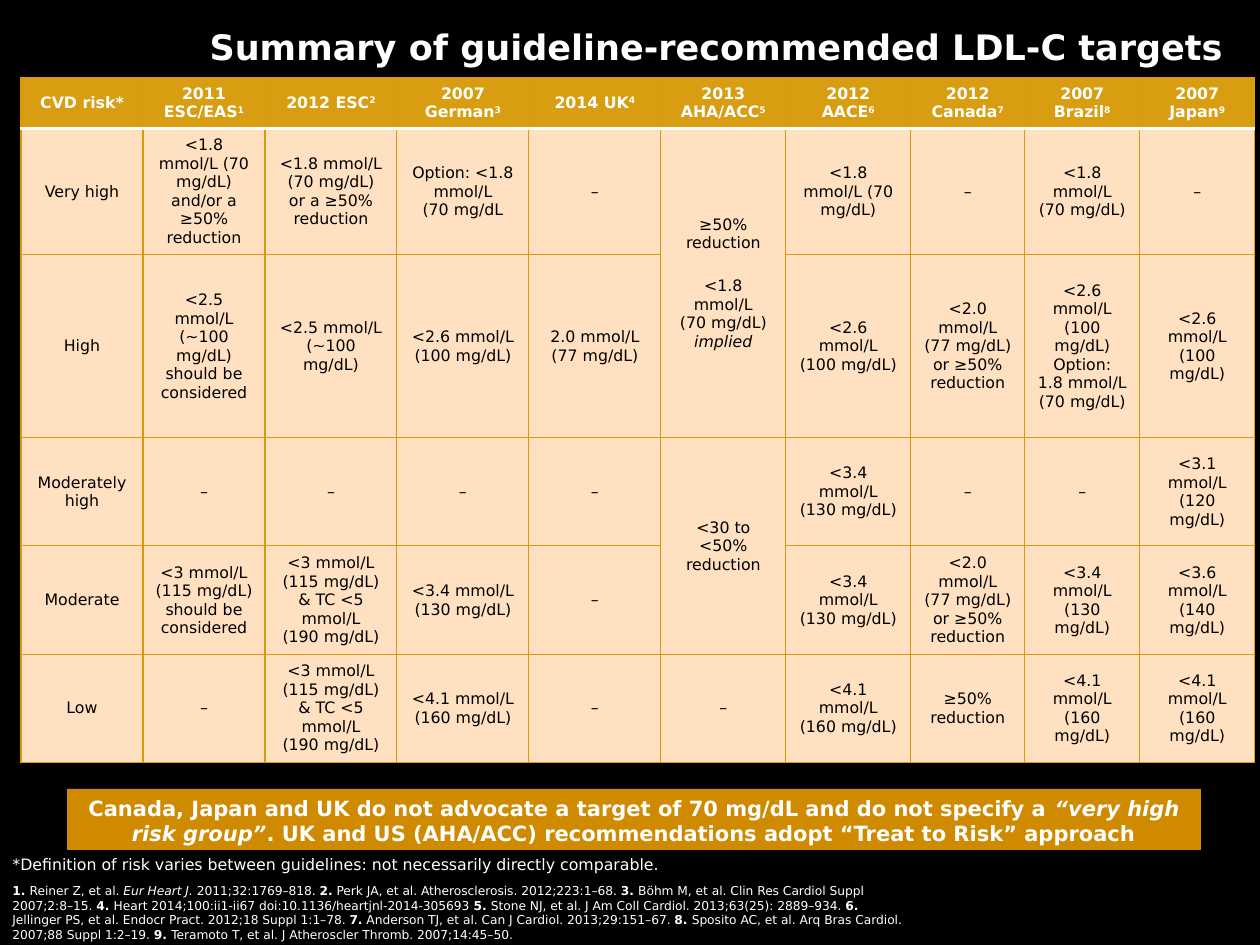
from dataclasses import dataclass
from lxml import etree
from pptx import Presentation
from pptx.dml.color import RGBColor as Color
from pptx.enum.text import MSO_ANCHOR as Anchor, MSO_AUTO_SIZE as AutoSize, PP_ALIGN as Align
from pptx.oxml.ns import qn
from pptx.util import Emu, Pt


@dataclass(frozen=True)
class Theme:
    font: str = "DejaVu Sans"
    background: str = "000000"
    light: str = "FFFFFF"
    dark: str = "000000"
    header: str = "D89D10"
    cell: str = "FFE0C1"
    border: str = "D89C0B"
    banner: str = "CF8A00"
    title_size: int = 20
    banner_size: int = 12
    table_size: int = 9
    reference_size: int = 7


theme = Theme()
BOLD = {"bold": True}
ITALIC = {"italic": True}


def px(value):
    return Emu(round(value * 914400 / 126))


def write(paragraph, runs, size, color, align=Align.LEFT, bold=False):
    for name, value in {"alignment": align, "space_before": Pt(0)}.items():
        setattr(paragraph, name, value)
    for text, extra in runs:
        for index, line in enumerate(text.split("\n")):
            if index:
                paragraph.add_line_break()
                line_break = paragraph._p.findall(qn("a:br"))[-1]
                etree.SubElement(line_break, qn("a:rPr"), sz=str(size * 100))
            run = paragraph.add_run()
            run.text = line
            formats = {"name": theme.font, "size": Pt(size), "bold": bold, "italic": False}
            for name, value in (formats | extra).items():
                setattr(run.font, name, value)
            run.font.color.rgb = Color.from_string(color)


presentation = Presentation()
presentation.slide_width, presentation.slide_height = px(1260), px(945)
slide = presentation.slides.add_slide(presentation.slide_layouts[1])
slide.background.fill.solid()
slide.background.fill.fore_color.rgb = Color.from_string(theme.background)

title = slide.shapes.title
banner = slide.placeholders[1]
footnote = slide.shapes.add_textbox(0, 0, 0, 0)
references = slide.shapes.add_textbox(0, 0, 0, 0)
places = [
    (title, (194, -33, 1042, 158), Anchor.MIDDLE, AutoSize.NONE),
    (banner, (67, 789, 1134, 61), Anchor.TOP, AutoSize.NONE),
    (footnote, (0, 849, 688, 32), Anchor.TOP, AutoSize.SHAPE_TO_FIT_TEXT),
    (references, (0, 877, 917, 72), Anchor.TOP, AutoSize.SHAPE_TO_FIT_TEXT),
]
for shape, place, anchor, auto_size in places:
    for name, value in zip(("left", "top", "width", "height"), place):
        setattr(shape, name, px(value))
    frame_format = {"word_wrap": True, "vertical_anchor": anchor, "auto_size": auto_size}
    for name, value in frame_format.items():
        setattr(shape.text_frame, name, value)

write(title.text_frame.paragraphs[0], [("Summary of guideline-recommended LDL-C targets", {})],
      theme.title_size, theme.light, Align.RIGHT, True)

banner.fill.solid()
banner.fill.fore_color.rgb = Color.from_string(theme.banner)
message = banner.text_frame.paragraphs[0]
properties = message._p.get_or_add_pPr()
properties.set("marL", "0")
properties.set("indent", "0")
etree.SubElement(properties, qn("a:buNone"))
write(message, [
    ("Canada, Japan and UK do not advocate a target of 70 mg/dL and do not specify a ", {}),
    ("“very high risk group”", ITALIC),
    (". UK and US (AHA/ACC) recommendations adopt “Treat to Risk” approach", {}),
], theme.banner_size, theme.light, Align.CENTER, True)

write(footnote.text_frame.paragraphs[0], [
    ("*Definition of risk varies between guidelines: not necessarily directly comparable.", {}),
], theme.table_size, theme.light)

write(references.text_frame.paragraphs[0], [
    ("1. ", BOLD), ("Reiner Z, et al. ", {}), ("Eur Heart J. ", ITALIC), ("2011;32:1769–818. ", {}),
    ("2.", BOLD), (" Perk JA, et al. Atherosclerosis. 2012;223:1–68. ", {}),
    ("3. ", BOLD), ("Böhm M, et al. Clin Res Cardiol Suppl 2007;2:8–15. ", {}),
    ("4. ", BOLD), ("Heart 2014;100:ii1-ii67 doi:10.1136/heartjnl-2014-305693", {}),
    (" 5. ", BOLD), ("Stone NJ, et al. J Am Coll Cardiol. 2013;63(25): 2889–934. ", {}),
    ("6. ", BOLD), ("Jellinger PS, et al. Endocr Pract. 2012;18 Suppl 1:1–78. ", {}),
    ("7.", BOLD), (" Anderson TJ, et al. Can J Cardiol. 2013;29:151–67. ", {}),
    ("8. ", BOLD), ("Sposito AC, et al. Arq Bras Cardiol. 2007;88 Suppl 1:2–19. ", {}),
    ("9. ", BOLD), ("Teramoto T, et al. J Atheroscler Thromb. 2007;14:45–50.", {}),
], theme.reference_size, theme.light)

guidelines = ["CVD risk*", "2011 ESC/EAS", "2012 ESC", "2007 German", "2014 UK", "2013 AHA/ACC",
              "2012 AACE", "2012 Canada", "2007 Brazil", "2007 Japan"]
targets = [
    ["Very high", "<1.8 mmol/L (70 mg/dL) and/or a ≥50% reduction",
     "<1.8 mmol/L\n(70 mg/dL) or a ≥50% reduction", "Option: <1.8 mmol/L\n(70 mg/dL", "–",
     "≥50% reduction", "<1.8 mmol/L (70 mg/dL)", "–", "<1.8 mmol/L\n(70 mg/dL)", "–"],
    ["High", "<2.5 mmol/L (~100 mg/dL) should be considered", "<2.5 mmol/L\n(~100 mg/dL)",
     "<2.6 mmol/L (100 mg/dL)", "2.0 mmol/L\n(77 mg/dL)", "", "<2.6 mmol/L (100 mg/dL)",
     "<2.0 mmol/L\n(77 mg/dL) or ≥50% reduction",
     "<2.6 mmol/L (100 mg/dL)\nOption:\n1.8 mmol/L\n(70 mg/dL)", "<2.6 mmol/L (100 mg/dL)"],
    ["Moderately high", "–", "–", "–", "–", "<30 to <50% reduction",
     "<3.4 mmol/L (130 mg/dL)", "–", "–", "<3.1 mmol/L (120 mg/dL)"],
    ["Moderate", "<3 mmol/L\n(115 mg/dL) should be considered",
     "<3 mmol/L\n(115 mg/dL) & TC <5 mmol/L\n(190 mg/dL)", "<3.4 mmol/L (130 mg/dL)", "–", "",
     "<3.4 mmol/L (130 mg/dL)", "<2.0 mmol/L (77 mg/dL) or ≥50% reduction",
     "<3.4 mmol/L (130 mg/dL)", "<3.6 mmol/L (140 mg/dL)"],
    ["Low", "–", "<3 mmol/L\n(115 mg/dL) & TC <5 mmol/L\n(190 mg/dL)",
     "<4.1 mmol/L (160 mg/dL)", "–", "–", "<4.1 mmol/L (160 mg/dL)", "≥50% reduction",
     "<4.1 mmol/L (160 mg/dL)", "<4.1 mmol/L (160 mg/dL)"],
]
rows = [guidelines] + targets
widths = [122, 122, 132, 132, 132, 125, 125, 114, 115, 115]
heights = [50, 123, 183, 108, 109, 105]
table = slide.shapes.add_table(len(rows), len(widths), px(21), px(78),
                               px(sum(widths)), px(sum(heights))).table
table.horz_banding = False
for column, width in zip(table.columns, widths):
    column.width = px(width)
for row, height in zip(table.rows, heights):
    row.height = px(height)

for row_index, row in enumerate(rows):
    is_header = row_index == 0
    for column_index, text in enumerate(row):
        cell = table.cell(row_index, column_index)
        cell.vertical_anchor = Anchor.MIDDLE
        cell_properties = cell._tc.get_or_add_tcPr()
        for side in "LRTB":
            under_header = (row_index, side) in ((0, "B"), (1, "T"))
            line = etree.SubElement(cell_properties, qn(f"a:ln{side}"),
                                    w=str(Pt(2 if under_header else 0.75)))
            line_fill = etree.SubElement(line, qn("a:solidFill"))
            etree.SubElement(line_fill, qn("a:srgbClr"),
                             val=theme.light if under_header else theme.border)
        cell.fill.solid()
        cell.fill.fore_color.rgb = Color.from_string(theme.header if is_header else theme.cell)
        if not text:
            continue
        paragraph = cell.text_frame.paragraphs[0]
        runs = [(text, {})]
        if is_header and column_index:
            runs.append((str(column_index), {}))
        write(paragraph, runs, theme.table_size, theme.light if is_header else theme.dark,
              Align.CENTER, is_header)
        if len(runs) > 1:
            paragraph.runs[-1].font._element.set("baseline", "30000")

for first_row in (1, 3):
    table.cell(first_row, 5).merge(table.cell(first_row + 1, 5))
implied = table.cell(1, 5).text_frame.add_paragraph()
write(implied, [("<1.8 mmol/L\n(70 mg/dL) ", {}), ("implied", ITALIC)],
      theme.table_size, theme.dark, Align.CENTER)
implied.space_before = Pt(14)

presentation.save("out.pptx")
